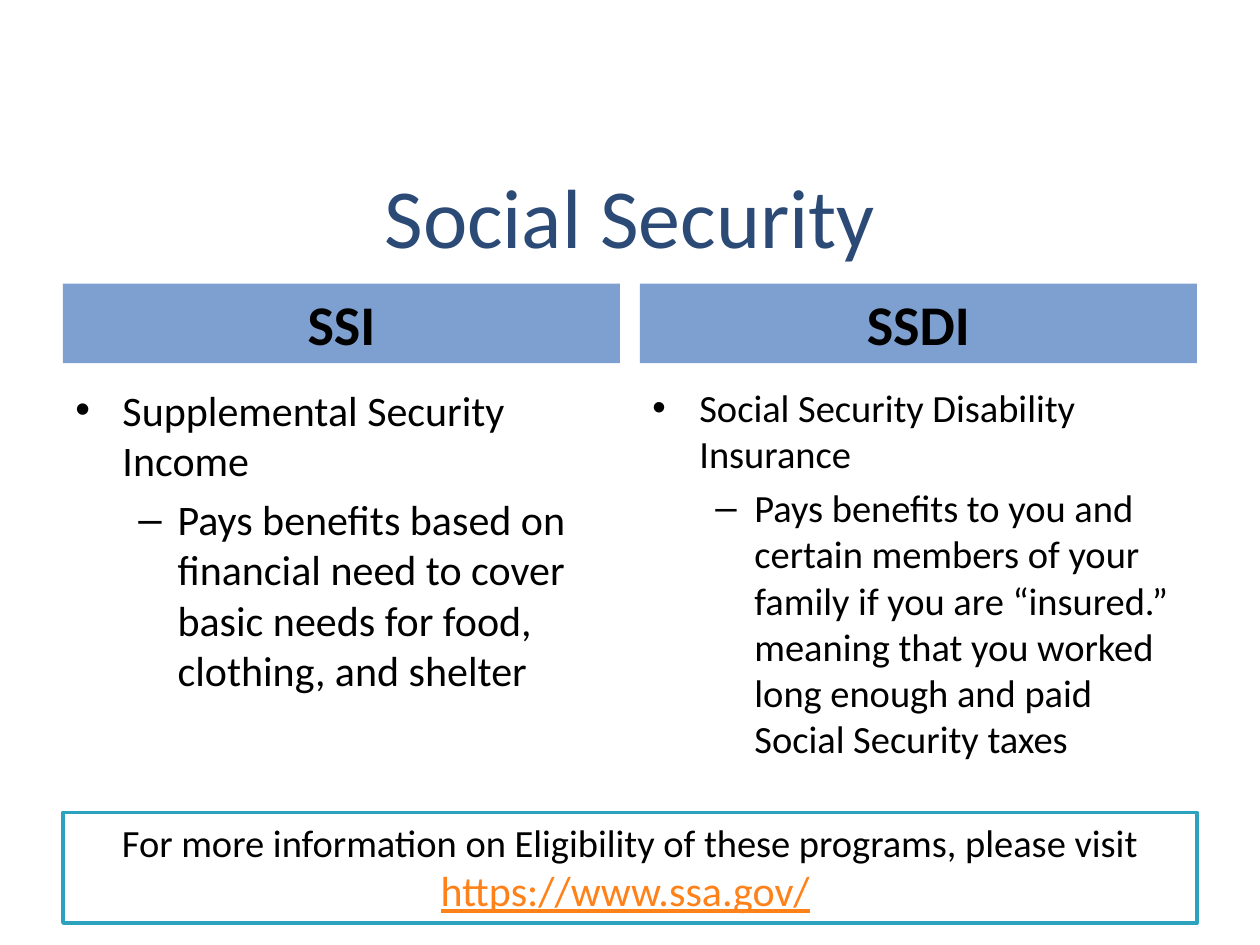
from lxml.etree import SubElement
from pptx import Presentation
from pptx.dml.color import RGBColor
from pptx.enum.shapes import MSO_SHAPE as Shape
from pptx.enum.text import MSO_ANCHOR as Anchor, PP_ALIGN as Align
from pptx.oxml.ns import qn
from pptx.util import Cm, Pt

COLORS = {"title": "2B4A76", "header": "7DA0D0", "text": "000000",
          "panel": "FFFFFF", "border": "2DA2BF", "address": "FF8119"}
FONT = "Calibri"
MARGIN, FULL_WIDTH = 1.27, 22.86
COLUMN_WIDTH, COLUMN_STEP = 11.23, 11.63


def add_span(para, text, size, color="text", bold=False, underline=False):
    span = para.add_run()
    span.text = text
    span.font.name = FONT
    span.font.size = Pt(size)
    span.font.bold = bold
    span.font.underline = underline
    span.font.color.rgb = RGBColor.from_string(COLORS[color])


def set_bullet(para, mark, margin, hanging):
    """Give the paragraph a bullet mark with a hanging indent in cm."""
    props = para._p.get_or_add_pPr()
    props.set("marL", str(Cm(margin)))
    props.set("indent", str(-Cm(hanging)))
    SubElement(props, qn("a:buFont"), typeface="Arial")
    SubElement(props, qn("a:buChar"), char=mark)


deck = Presentation()
deck.slide_width, deck.slide_height = Cm(25.4), Cm(19.05)
page = deck.slides.add_slide(deck.slide_layouts[6])

# Title
title = page.shapes.add_textbox(Cm(MARGIN), Cm(2.97), Cm(FULL_WIDTH), Cm(2.74))
title.text_frame.word_wrap = True
title.text_frame.vertical_anchor = Anchor.MIDDLE
para = title.text_frame.paragraphs[0]
para.alignment = Align.CENTER
add_span(para, "Social Security", 48, "title")

# Two programs side by side
programs = [
    ("SSI", 24, "Supplemental Security Income",
     "Pays benefits based on financial need to cover basic needs for food, "
     "clothing, and shelter"),
    ("SSDI", 22, "Social Security Disability Insurance",
     "Pays benefits to you and certain members of your family if you are "
     "“insured.” meaning that you worked long enough and paid Social Security taxes"),
]
for column, (name, size, full_name, detail) in enumerate(programs):
    left = Cm(MARGIN + column * COLUMN_STEP)
    header = page.shapes.add_shape(
        Shape.RECTANGLE, left, Cm(5.72), Cm(COLUMN_WIDTH), Cm(1.6))
    header.shadow.inherit = False
    header.fill.solid()
    header.fill.fore_color.rgb = RGBColor.from_string(COLORS["header"])
    header.line.fill.background()
    header.text_frame.vertical_anchor = Anchor.BOTTOM
    para = header.text_frame.paragraphs[0]
    para.alignment = Align.CENTER
    add_span(para, name, 32, bold=True)

    body = page.shapes.add_textbox(left, Cm(7.62), Cm(COLUMN_WIDTH), Cm(8.46))
    body.text_frame.word_wrap = True
    para = body.text_frame.paragraphs[0]
    set_bullet(para, "•", 0.95, 0.95)
    add_span(para, full_name, size)
    para = body.text_frame.add_paragraph()
    para.level = 1
    para.space_before = Pt(size * 0.2)
    set_bullet(para, "–", 2.06, 0.79)
    add_span(para, detail, size)

# Where to read more
footer = page.shapes.add_shape(
    Shape.RECTANGLE, Cm(MARGIN), Cm(16.38), Cm(FULL_WIDTH), Cm(2.23))
footer.shadow.inherit = False
footer.fill.solid()
footer.fill.fore_color.rgb = RGBColor.from_string(COLORS["panel"])
footer.line.color.rgb = RGBColor.from_string(COLORS["border"])
footer.line.width = Pt(2)
footer.text_frame.word_wrap = True
footer.text_frame.vertical_anchor = Anchor.TOP
para = footer.text_frame.paragraphs[0]
para.alignment = Align.CENTER
add_span(para, "For more information on Eligibility of these programs, please visit ", 22)
add_span(para, "https://www.ssa.gov/", 24, "address", underline=True)
add_span(para, " ", 24)

deck.save("out.pptx")
